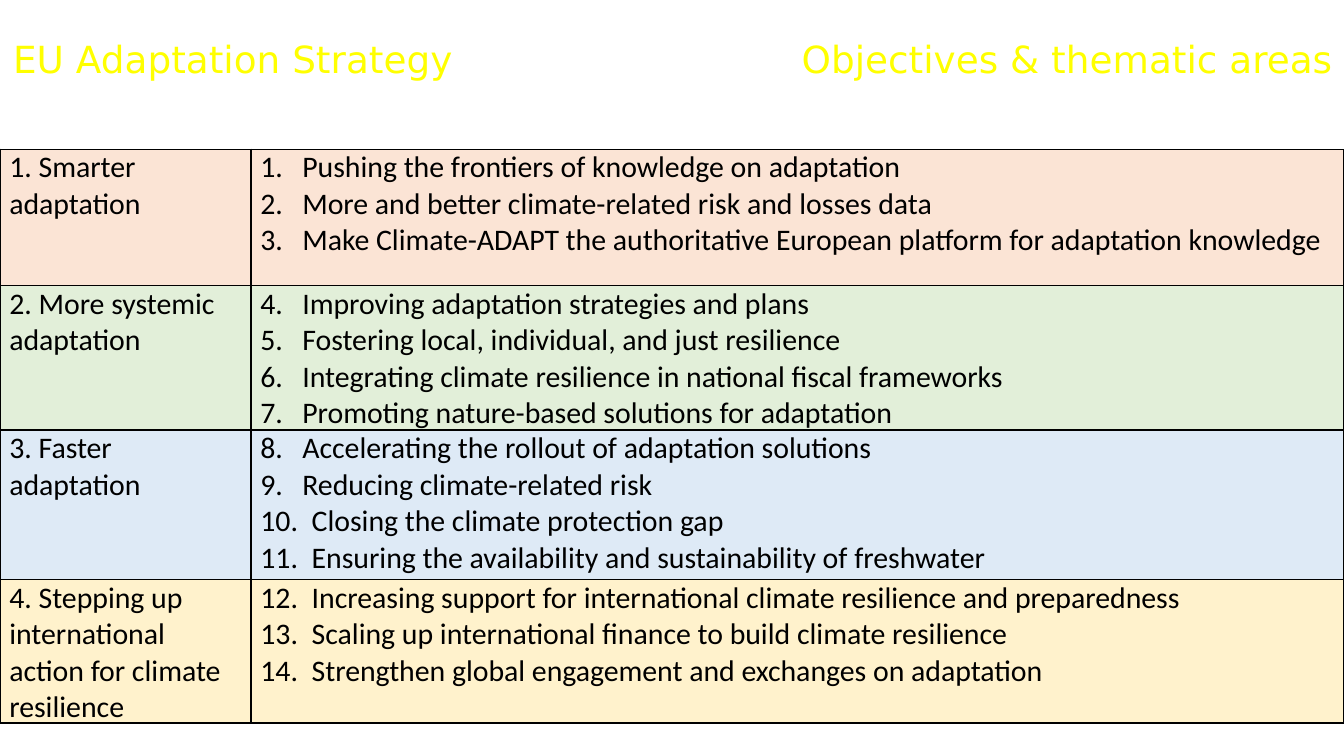
from typing import NamedTuple

from lxml.etree import SubElement
from pptx import Presentation
from pptx.dml.color import RGBColor
from pptx.enum.text import PP_ALIGN
from pptx.oxml.ns import qn
from pptx.util import Pt

BLACK = RGBColor(0x00, 0x00, 0x00)
YELLOW = RGBColor(0xFF, 0xFF, 0x00)
PEACH = RGBColor(0xFB, 0xE4, 0xD5)
GREEN = RGBColor(0xE2, 0xEF, 0xD9)
BLUE = RGBColor(0xDE, 0xEA, 0xF6)
CREAM = RGBColor(0xFF, 0xF2, 0xCC)

WIDTH, HEIGHT = 720, 405
COLS = (134.5, 585.5)
TOP = 80


class Title(NamedTuple):
    text: str
    left: float
    align: PP_ALIGN


class Goal(NamedTuple):
    name: str
    fill: RGBColor
    height: float
    areas: tuple[str, ...]


TITLES = (
    Title("EU Adaptation Strategy", 0, PP_ALIGN.LEFT),
    Title("Objectives & thematic areas", 391, PP_ALIGN.RIGHT),
)

GOALS = (
    Goal("1. Smarter adaptation", PEACH, 73, (
        "Pushing the frontiers of knowledge on adaptation",
        "More and better climate-related risk and losses data",
        "Make Climate-ADAPT the authoritative European platform for adaptation knowledge",
    )),
    Goal("2. More systemic adaptation", GREEN, 77.5, (
        "Improving adaptation strategies and plans",
        "Fostering local, individual, and just resilience",
        "Integrating climate resilience in national fiscal frameworks",
        "Promoting nature-based solutions for adaptation",
    )),
    Goal("3. Faster adaptation", BLUE, 80, (
        "Accelerating the rollout of adaptation solutions",
        "Reducing climate-related risk",
        "Closing the climate protection gap",
        "Ensuring the availability and sustainability of freshwater",
    )),
    Goal("4. Stepping up international action for climate resilience", CREAM, 71, (
        "Increasing support for international climate resilience and preparedness",
        "Scaling up international finance to build climate resilience",
        "Strengthen global engagement and exchanges on adaptation",
    )),
)


def style(para, face: str, size: float, color: RGBColor) -> None:
    para.font.name = face
    para.font.size = Pt(size)
    para.font.color.rgb = color


def add_title(slide, title: Title) -> None:
    box = slide.shapes.add_textbox(Pt(title.left), Pt(16), Pt(330), Pt(31.5))
    box.text_frame.word_wrap = True
    para = box.text_frame.paragraphs[0]
    para.text = title.text
    para.alignment = title.align
    style(para, "DejaVu Sans", 20, YELLOW)


def number(para, start: int, value: int) -> None:
    """Number a list item, with a wider indent for two digits."""
    indent = Pt(22.5 if value < 10 else 27.5)
    props = para._p.get_or_add_pPr()
    props.set("marL", str(indent))
    props.set("indent", str(-indent))
    SubElement(props, qn("a:buFont"), typeface="Calibri")
    SubElement(props, qn("a:buAutoNum"), type="arabicPeriod", startAt=str(start))


def frame(cell) -> None:
    """Draw a thin black border on all four sides."""
    props = cell._tc.get_or_add_tcPr()
    for side in ("L", "R", "T", "B"):
        line = SubElement(props, qn(f"a:ln{side}"), w=str(Pt(1)))
        fill = SubElement(line, qn("a:solidFill"))
        SubElement(fill, qn("a:srgbClr"), val=str(BLACK))


def fill_cell(cell, lines: tuple[str, ...], color: RGBColor, start: int = 0) -> None:
    """Fill a cell; the lines are numbered when start is given."""
    frame(cell)
    cell.fill.solid()
    cell.fill.fore_color.rgb = color
    cell.margin_left = cell.margin_right = Pt(5)
    cell.margin_top = cell.margin_bottom = Pt(0)
    cell.text = "\n".join(lines)
    for i, para in enumerate(cell.text_frame.paragraphs):
        if start:
            number(para, start, start + i)
        style(para, "Calibri", 16, BLACK)


def add_goals(slide) -> None:
    total = sum(goal.height for goal in GOALS)
    table = slide.shapes.add_table(
        len(GOALS), len(COLS), Pt(0), Pt(TOP), Pt(WIDTH), Pt(total)).table
    table.first_row = table.horz_banding = False
    for col, width in zip(table.columns, COLS):
        col.width = Pt(width)
    start = 1
    for row, goal in zip(table.rows, GOALS):
        row.height = Pt(goal.height)
        name, areas = row.cells
        fill_cell(name, (goal.name,), goal.fill)
        fill_cell(areas, goal.areas, goal.fill, start)
        start += len(goal.areas)


def main() -> None:
    deck = Presentation()
    deck.slide_width, deck.slide_height = Pt(WIDTH), Pt(HEIGHT)
    slide = deck.slides.add_slide(deck.slide_layouts[6])
    for title in TITLES:
        add_title(slide, title)
    add_goals(slide)
    deck.save("out.pptx")


if __name__ == "__main__":
    main()
